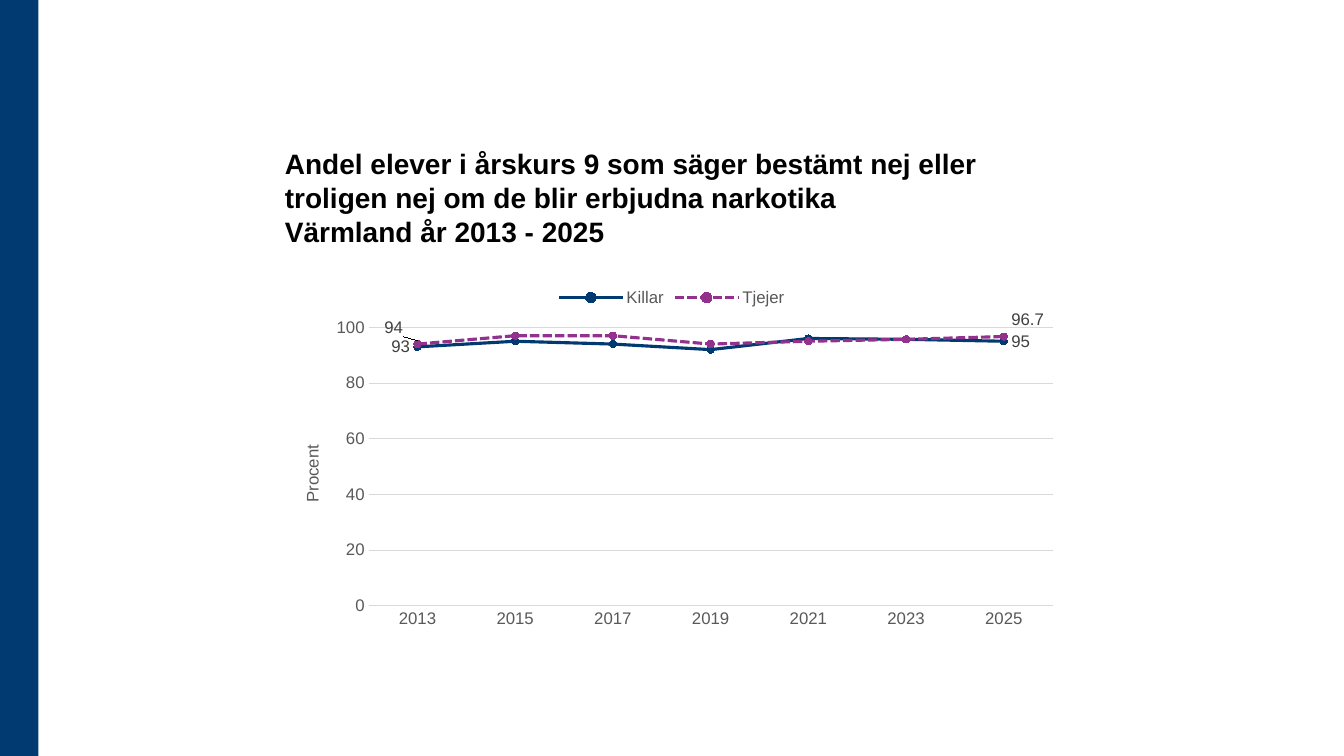
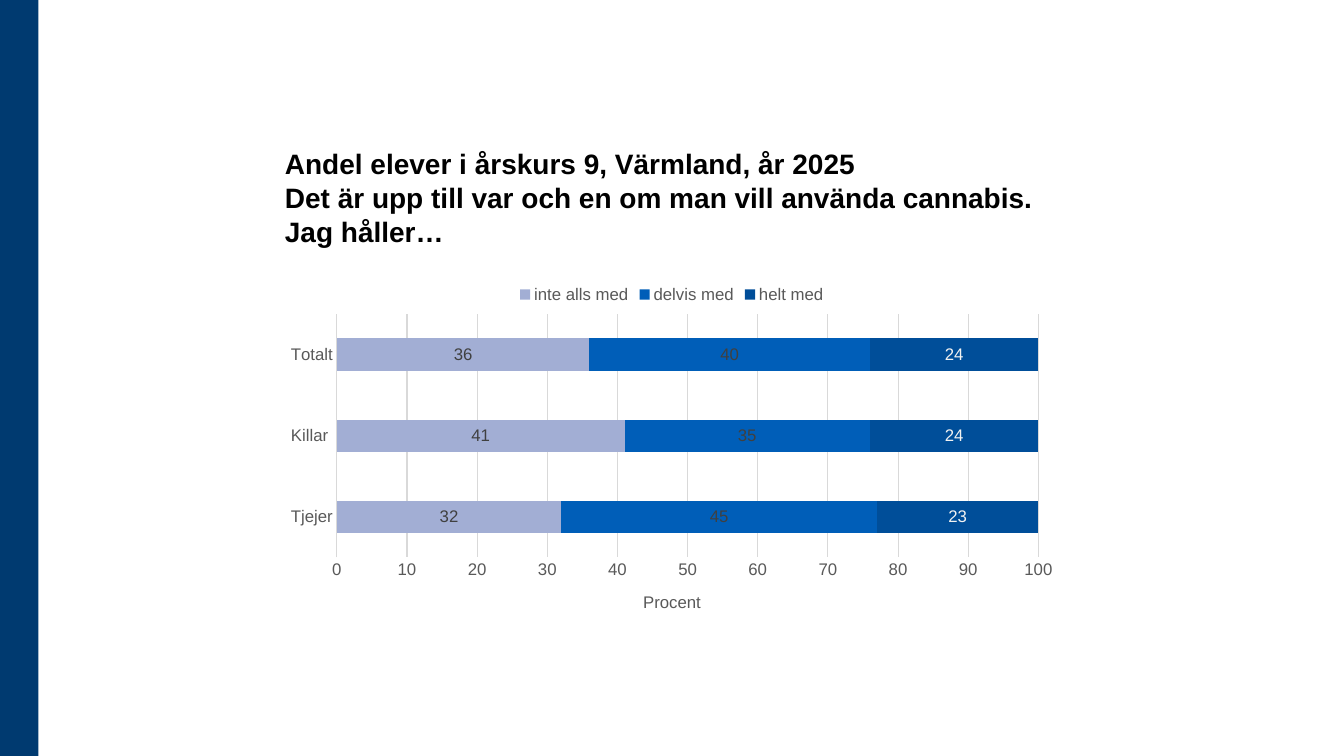
from lxml import etree
from pptx import Presentation
from pptx import util as u
from pptx.chart.data import CategoryChartData
from pptx.dml.color import RGBColor
from pptx.enum import chart as ch, dml, shapes, text
from pptx.oxml.ns import qn

NAVY = RGBColor(0x00, 0x3A, 0x70)
PURPLE = RGBColor(0x93, 0x32, 0x8E)
PALE_BLUE = RGBColor(0xA2, 0xAE, 0xD4)
BLUE = RGBColor(0x00, 0x5E, 0xB8)
DARK_BLUE = RGBColor(0x00, 0x4E, 0x99)
BLACK = RGBColor(0, 0, 0)
AXIS_GREY = RGBColor(0x59, 0x59, 0x59)
LABEL_GREY = RGBColor(0x40, 0x40, 0x40)
GRID_GREY = RGBColor(0xD9, 0xD9, 0xD9)
OFF_WHITE = RGBColor(0xF2, 0xF2, 0xF2)

FONT = "Arial"
WIDTH, HEIGHT = u.Cm(33.87), u.Cm(19.05)
LEFT, CONTENT_WIDTH = u.Cm(6.93), u.Cm(20)


def style_font(font, color, size=12, bold=False):
    font.name = FONT
    font.size = u.Pt(size)
    font.bold = bold
    font.color.rgb = color


def style_line(line, color, width):
    line.color.rgb = color
    line.width = u.Pt(width)


def set_layout(parent, index, **values):
    layout = parent.find(qn("c:layout"))
    if layout is None:
        layout = etree.Element(qn("c:layout"))
        parent.insert(index, layout)
    manual = etree.SubElement(layout, qn("c:manualLayout"))
    for name, value in values.items():
        etree.SubElement(manual, qn("c:" + name)).set("val", str(value))


def add_slide(prs, lines):
    s = prs.slides.add_slide(prs.slide_layouts[6])
    band = s.shapes.add_shape(shapes.MSO_SHAPE.RECTANGLE, 0, 0, u.Cm(0.97), HEIGHT)
    band.shadow.inherit = False
    band.fill.solid()
    band.fill.fore_color.rgb = NAVY
    band.line.fill.background()

    sp = s.shapes.add_textbox(LEFT, u.Cm(2.69), CONTENT_WIDTH, u.Cm(3.68))
    tf = sp.text_frame
    tf.word_wrap = True
    tf.vertical_anchor = text.MSO_ANCHOR.BOTTOM
    p = tf.paragraphs[0]
    p.line_spacing = u.Pt(24)
    for i, line in enumerate(lines):
        if i:
            p.add_line_break()
        r = p.add_run()
        r.text = line
        style_font(r.font, BLACK, 20, True)
    return s


def add_chart(s, kind, top, categories, series, step, plot_box, title_at):
    data = CategoryChartData()
    data.categories = categories
    for name, values, _ in series:
        data.add_series(name, values)
    chart = s.shapes.add_chart(kind, LEFT, top, CONTENT_WIDTH, u.Cm(9), data).chart
    style_font(chart.font, BLACK)
    chart.has_title = False
    chart.has_legend = True
    chart.legend.position = ch.XL_LEGEND_POSITION.TOP
    chart.legend.include_in_layout = False
    style_font(chart.legend.font, AXIS_GREY)

    for axis in (chart.category_axis, chart.value_axis):
        axis.major_tick_mark = axis.minor_tick_mark = ch.XL_TICK_MARK.NONE
        style_font(axis.tick_labels.font, AXIS_GREY)
    style_line(chart.category_axis.format.line, GRID_GREY, 0.75)
    axis = chart.value_axis
    axis.format.line.fill.background()
    axis.minimum_scale, axis.maximum_scale, axis.major_unit = 0, 100, step
    axis.has_major_gridlines = True
    style_line(axis.major_gridlines.format.line, GRID_GREY, 0.75)
    axis.tick_labels.number_format = "0"
    axis.tick_labels.number_format_is_linked = False

    r = axis.axis_title.text_frame.paragraphs[0].add_run()
    r.text = "Procent"
    style_font(r.font, AXIS_GREY)
    x, y = title_at
    set_layout(axis.axis_title._element, 1, xMode="edge", yMode="edge", x=x, y=y)
    x, y, w, h = plot_box
    set_layout(chart._chartSpace.chart.plotArea, 0, layoutTarget="inner",
               xMode="edge", yMode="edge", x=x, y=y, w=w, h=h)
    chart.plots[0].vary_by_categories = False
    return chart


def style_line_series(series, color, dash):
    series.smooth = False
    style_line(series.format.line, color, 2.25)
    series.format.line.dash_style = dash
    marker = series.marker
    marker.style = ch.XL_MARKER_STYLE.CIRCLE
    marker.size = 5
    marker.format.fill.solid()
    marker.format.fill.fore_color.rgb = color
    style_line(marker.format.line, color, 0.75)
    series.data_labels.show_value = False


def label_point(series, index, position, shift=0):
    label = series.points[index].data_label
    style_font(label.font, LABEL_GREY)
    label.position = position
    if shift:
        for element in series._element.xpath(f".//c:dLbl[c:idx/@val='{index}']"):
            set_layout(element, 1, x=shift, y=0)


def style_bar_series(series, color, label_color):
    series.format.fill.solid()
    series.format.fill.fore_color.rgb = color
    labels = series.data_labels
    labels.show_value = True
    labels.position = ch.XL_LABEL_POSITION.CENTER
    labels.number_format = "0"
    labels.number_format_is_linked = False
    style_font(labels.font, label_color)


def add_refusal_slide(prs):
    s = add_slide(prs, [
        "Andel elever i årskurs 9 som säger bestämt nej eller troligen nej om de blir erbjudna narkotika",
        "Värmland år 2013 - 2025",
    ])
    series = [
        ("Killar", (93, 95, 94, 92, 96, 95.7, 95), (NAVY, dml.MSO_LINE.SOLID)),
        ("Tjejer", (94, 97, 97, 94, 95, 95.7, 96.7), (PURPLE, dml.MSO_LINE.SQUARE_DOT)),
    ]
    years = [str(year) for year in range(2013, 2026, 2)]
    chart = add_chart(s, ch.XL_CHART_TYPE.LINE_MARKERS, u.Cm(6.99), years, series, 20,
                      (0.118, 0.14, 0.862, 0.78), (0.03, 0.46))
    boys, girls = chart.plots[0].series
    for line, (_, _, style) in zip((boys, girls), series):
        style_line_series(line, *style)
    pos = ch.XL_LABEL_POSITION
    label_point(boys, 0, pos.LEFT)
    label_point(boys, 6, pos.RIGHT)
    label_point(girls, 0, pos.ABOVE, -0.03)
    label_point(girls, 6, pos.ABOVE, 0.03)


def add_cannabis_slide(prs):
    s = add_slide(prs, [
        "Andel elever i årskurs 9, Värmland, år 2025 ",
        "Det är upp till var och en om man vill använda cannabis. Jag håller…",
    ])
    series = [
        ("inte alls med", (32, 41, 36), (PALE_BLUE, LABEL_GREY)),
        ("delvis med", (45, 35, 40), (BLUE, LABEL_GREY)),
        ("helt med", (23, 24, 24), (DARK_BLUE, OFF_WHITE)),
    ]
    chart = add_chart(s, ch.XL_CHART_TYPE.BAR_STACKED, u.Cm(6.91),
                      ["Tjejer", "Killar ", "Totalt"], series, 10,
                      (0.078, 0.112, 0.884, 0.681), (0.46, 0.88))
    plot = chart.plots[0]
    plot.gap_width, plot.overlap = 150, 100
    for bars, (_, _, style) in zip(plot.series, series):
        style_bar_series(bars, *style)


def main():
    prs = Presentation()
    prs.slide_width, prs.slide_height = WIDTH, HEIGHT
    add_refusal_slide(prs)
    add_cannabis_slide(prs)
    prs.save("out.pptx")


if __name__ == "__main__":
    main()
